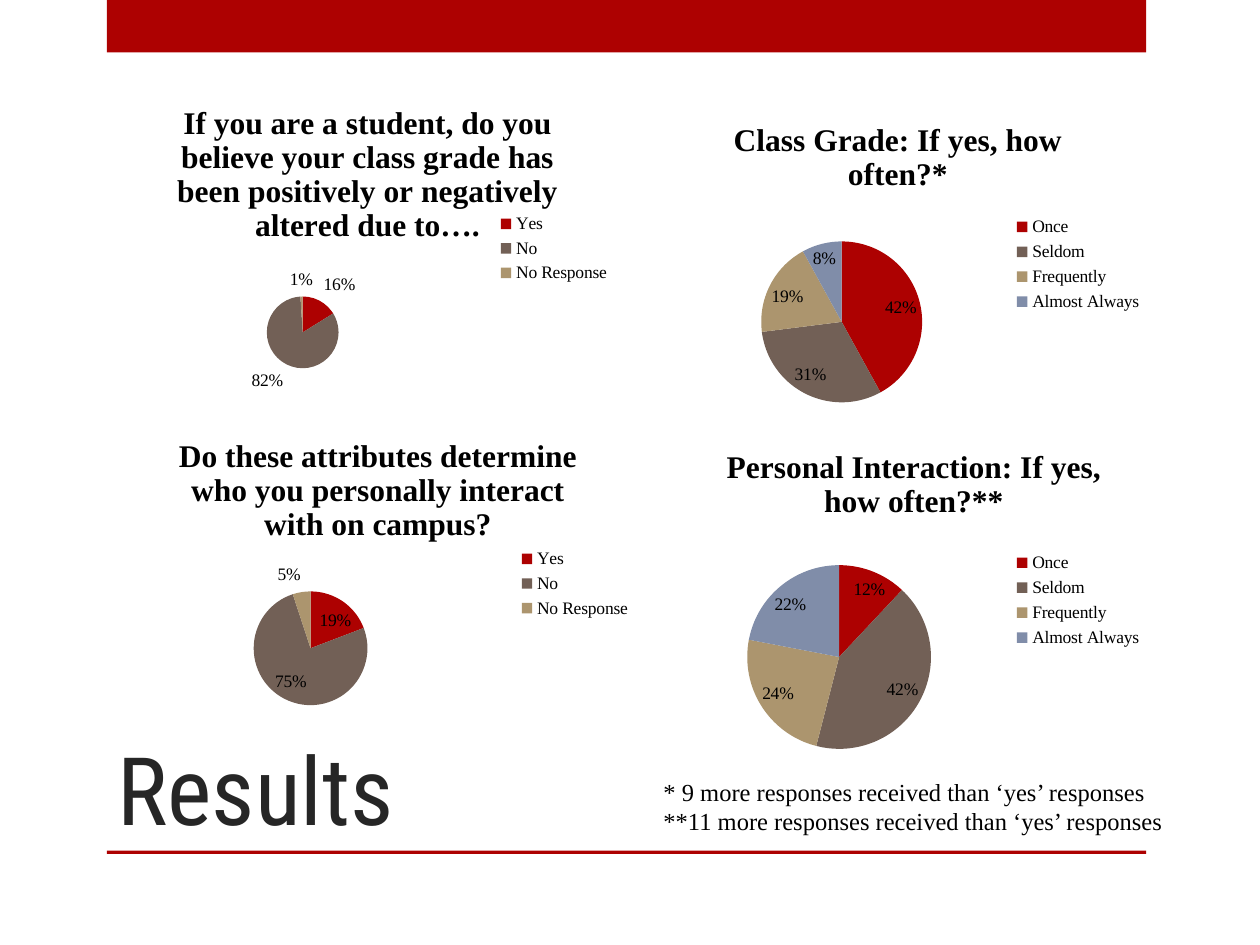
import pptx
import pptx.chart.data
import pptx.dml.color
import pptx.enum.chart
import pptx.enum.shapes
import pptx.enum.text
import pptx.oxml
import pptx.oxml.ns
import pptx.util

Pt = pptx.util.Pt
RGBColor = pptx.dml.color.RGBColor
RED = RGBColor(0xAD, 0x01, 0x01)
BROWN = RGBColor(0x72, 0x60, 0x56)
TAN = RGBColor(0xAC, 0x95, 0x6E)
BLUE = RGBColor(0x80, 0x8D, 0xA9)
BLACK = RGBColor(0, 0, 0)
CHARCOAL = RGBColor(0x26, 0x26, 0x26)
SERIF = "Times New Roman"


def style(font, name, size, color):
    font.name = name
    font.size = Pt(size)
    font.color.rgb = color


def place(frame, x, y, w=None, h=None, inner=False):
    target = '<c:layoutTarget val="inner"/>' if inner else ""
    modes = '<c:xMode val="edge"/><c:yMode val="edge"/>'
    values = (("x", x), ("y", y), ("w", w), ("h", h))
    sizes = "".join(f'<c:{key} val="{value:.4f}"/>' for key, value in values if value is not None)
    layout = pptx.oxml.parse_xml(
        f'<c:layout {pptx.oxml.ns.nsdecls("c")}><c:manualLayout>'
        f"{target}{modes}{sizes}</c:manualLayout></c:layout>"
    )
    for old in frame.findall(pptx.oxml.ns.qn("c:layout")):
        frame.remove(old)
    before = [pptx.oxml.ns.qn(tag) for tag in ("c:tx", "c:legendPos", "c:legendEntry")]
    frame.insert(sum(child.tag in before for child in frame), layout)


deck = pptx.Presentation()
deck.slide_width = Pt(720)
deck.slide_height = Pt(540)
slide = deck.slides.add_slide(deck.slide_layouts[5])

for top, height in ((0, 30), (486, 2)):
    bar = slide.shapes.add_shape(
        pptx.enum.shapes.MSO_SHAPE.RECTANGLE, Pt(61), Pt(top), Pt(594), Pt(height)
    )
    bar.shadow.inherit = False
    bar.fill.solid()
    bar.fill.fore_color.rgb = RED
    bar.line.fill.background()

heading = slide.shapes.title
heading.left, heading.top, heading.width, heading.height = Pt(60), Pt(360), Pt(534), Pt(126)
heading.text_frame.vertical_anchor = pptx.enum.text.MSO_ANCHOR.BOTTOM
heading_line = heading.text_frame.paragraphs[0]
heading_line.alignment = pptx.enum.text.PP_ALIGN.LEFT
heading_run = heading_line.add_run()
heading_run.text = "Results"
style(heading_run.font, "Roboto Condensed", 54, CHARCOAL)

answers = ("Yes", "No", "No Response")
frequencies = ("Once", "Seldom", "Frequently", "Almost Always")

surveys = (
    ("If you are a student, do you believe your class grade has been positively or "
     "negatively altered due to….", answers, (16, 82, 1),
     (66, 48, 288, 186), (98, 55.5), (173, 190, 20.5), (279, 119.5)),
    ("Class Grade: If yes, how often?*", frequencies, (42, 31, 19, 8),
     (366, 60, 294, 180), (416, 65.5), (481, 184, 46), (576, 121)),
    ("Do these attributes determine who you personally interact with on campus?",
     answers, (19, 75, 5),
     (66, 240, 300, 186), (99, 246), (177.5, 370.5, 32.5), (291, 311)),
    ("Personal Interaction: If yes, how often?**", frequencies, (12, 42, 24, 22),
     (384, 246, 276, 192), (412, 252), (479.5, 375.5, 52.5), (576, 313)),
)

for question, categories, values, box, title_at, pie_at, legend_at in surveys:
    left, top, width, height = box
    responses = pptx.chart.data.CategoryChartData(number_format="0")
    responses.categories = categories
    responses.add_series("Series 1", values)
    chart = slide.shapes.add_chart(
        pptx.enum.chart.XL_CHART_TYPE.PIE, *(Pt(length) for length in box), responses
    ).chart
    style(chart.font, SERIF, 10, BLACK)

    chart.has_title = True
    question_run = chart.chart_title.text_frame.paragraphs[0].add_run()
    question_run.text = question
    style(question_run.font, SERIF, 18, BLACK)
    question_run.font.bold = True
    title_x, title_y = title_at
    place(chart.chart_title._element, (title_x - left) / width, (title_y - top) / height)

    chart.has_legend = True
    chart.legend.position = pptx.enum.chart.XL_LEGEND_POSITION.RIGHT
    chart.legend.include_in_layout = False
    style(chart.legend.font, SERIF, 10, BLACK)
    legend_x, legend_y = legend_at
    place(chart.legend._element, (legend_x - left) / width, (legend_y - top) / height,
          80 / width, 15 * len(categories) / height)

    pie = chart.plots[0]
    pie.vary_by_categories = True
    center_x, center_y, radius = pie_at
    place(chart._chartSpace.chart.plotArea, (center_x - radius - left) / width,
          (center_y - radius - top) / height, 2 * radius / width, 2 * radius / height, True)
    for index, color in enumerate((RED, BROWN, TAN, BLUE)[:len(values)]):
        wedge = pie.series[0].points[index].format
        wedge.fill.solid()
        wedge.fill.fore_color.rgb = color
        wedge.line.fill.background()

    pie.has_data_labels = True
    labels = pie.data_labels
    labels.show_value = True
    labels.number_format = '0"%"'
    labels.number_format_is_linked = False
    labels.position = pptx.enum.chart.XL_LABEL_POSITION.BEST_FIT
    style(labels.font, SERIF, 10, BLACK)

footnotes = slide.shapes.add_textbox(Pt(372), Pt(440.5), Pt(306), Pt(41)).text_frame
footnotes.word_wrap = True
notes = (
    "* 9 more responses received than ‘yes’ responses",
    "**11 more responses received than ‘yes’ responses",
)
for index, note in enumerate(notes):
    line = footnotes.add_paragraph() if index else footnotes.paragraphs[0]
    note_run = line.add_run()
    note_run.text = note
    style(note_run.font, SERIF, 14, BLACK)

deck.save("out.pptx")
